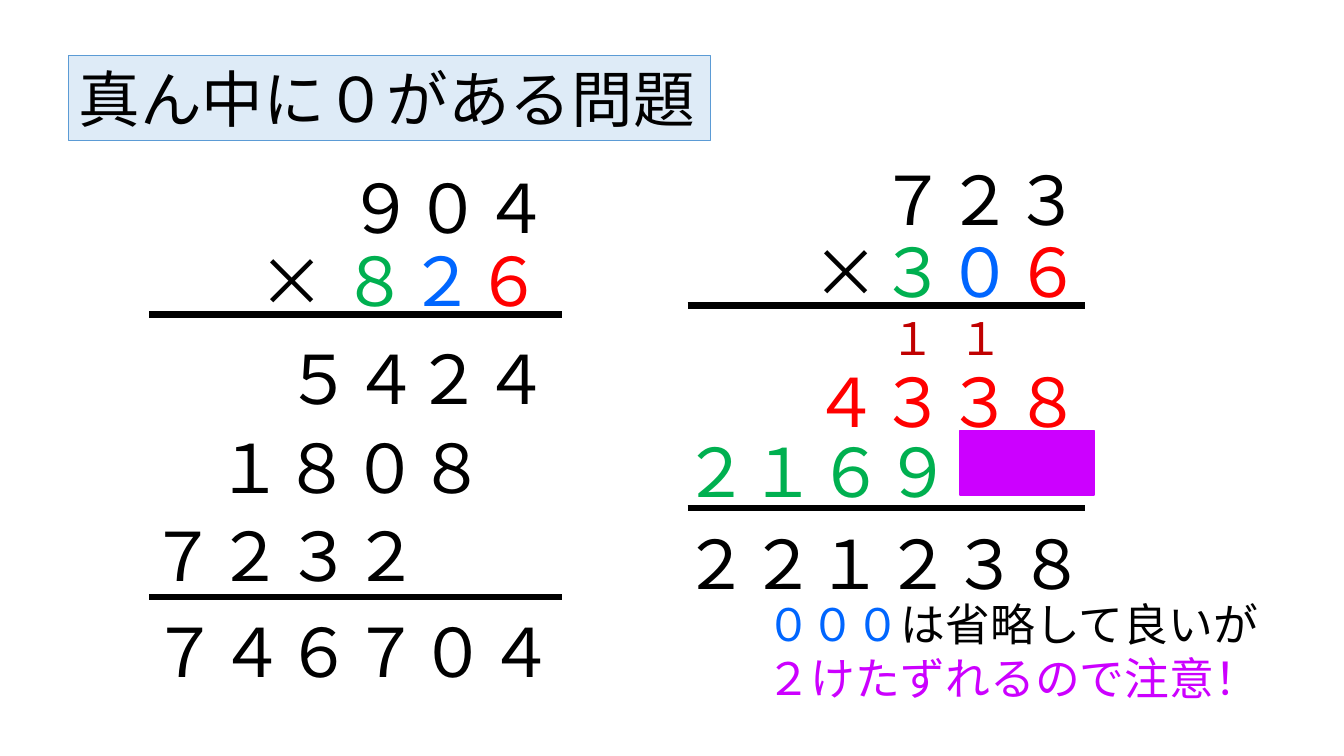
from lxml import etree
from pptx import Presentation
from pptx.dml.color import RGBColor
from pptx.enum.shapes import MSO_CONNECTOR, MSO_SHAPE
from pptx.enum.text import MSO_ANCHOR, MSO_AUTO_SIZE, PP_ALIGN
from pptx.oxml.ns import qn
from pptx.util import Inches, Pt

RECTANGLE = MSO_SHAPE.RECTANGLE
STRAIGHT = MSO_CONNECTOR.STRAIGHT
LEFT = PP_ALIGN.LEFT
TOP, MIDDLE = MSO_ANCHOR.TOP, MSO_ANCHOR.MIDDLE
FIT_SHAPE = MSO_AUTO_SIZE.SHAPE_TO_FIT_TEXT

FONT = "Noto Sans CJK JP"
BLACK, RED, DARK_RED = "000000", "FF0000", "C00000"
GREEN, BLUE, PURPLE = "00B050", "0066FF", "CC00FF"
TITLE_FILL, TITLE_LINE = "DEEBF7", "5B9BD5"
DIGIT_SIZE, CARRY_SIZE, NOTE_SIZE, TITLE_SIZE = 48, 32, 32, 44
DIGIT_HEIGHT, CARRY_HEIGHT = 0.91, 0.64

TITLE = "真ん中に０がある問題"
NOTE = [
    [("０００", BLUE), ("は省略して良いが", BLACK)],
    [("２けたずれるので注意！", PURPLE)],
]

# Each row: top, then its groups of digits as (left, width, runs)
LEFT_PROBLEM = [
    (1.6, [(3.35, 2.21, [("９０４", BLACK)])]),
    (2.32, [(2.47, 3.2, [("× ", BLACK), ("８", GREEN), ("２", BLUE), ("６", RED)])]),
    (3.3, [(2.73, 1.56, [("５４", BLACK)]), (4.02, 1.55, [("２４", BLACK)])]),
    (4.18, [(2.05, 1.57, [("１８", BLACK)]), (3.39, 1.6, [("０８", BLACK)])]),
    (5.05, [(1.38, 1.6, [("７２", BLACK)]), (2.73, 1.6, [("３２", BLACK)])]),
    (6.01, [(1.4, 4.23, [("７４６７０４", BLACK)])]),
]
RIGHT_PROBLEM = [
    (1.52, [(8.62, 2.21, [("７２３", BLACK)])]),
    (2.24, [(7.96, 2.97, [("×", BLACK), ("３", GREEN), ("０", BLUE), ("６", RED)])]),
    (3.53, [(7.96, 1.56, [("４３", RED)]), (9.29, 0.77, [("３", RED)]),
            (9.96, 0.8, [("８", RED)])]),
    (4.22, [(6.67, 1.56, [("２１", GREEN)]), (8.01, 0.8, [("６", GREEN)]),
            (8.67, 0.8, [("９", GREEN)])]),
    (5.13, [(6.67, 4.29, [("２２１２３８", BLACK)])]),
]
CARRY_TOP, CARRY_WIDTH, CARRY_LEFTS = 3.03, 0.64, (8.73, 9.41)
# Each problem's rules: start, end, heights
RULES = [(1.48, 5.57, (3.12, 5.92)), (6.82, 10.76, (3.03, 5.04))]


def color(hex_string):
    return RGBColor.from_string(hex_string)


def write(shape, paragraphs, size, wrap=True, anchor=TOP):
    """Fill a shape with paragraphs, each a list of (text, colour) runs."""
    frame = shape.text_frame
    frame.word_wrap = wrap
    frame.auto_size = FIT_SHAPE
    frame.vertical_anchor = anchor
    for index, runs in enumerate(paragraphs):
        paragraph = frame.add_paragraph() if index else frame.paragraphs[0]
        paragraph.alignment = LEFT
        for text, run_color in runs:
            run = paragraph.add_run()
            run.text = text
            run.font.size = Pt(size)
            run.font.name = FONT
            run.font.color.rgb = color(run_color)
            east_asian = etree.SubElement(run.font._element, qn("a:ea"))
            east_asian.set("typeface", FONT)


def add_text(slide, left, top, width, height, paragraphs, size, wrap=True):
    box = slide.shapes.add_textbox(
        Inches(left), Inches(top), Inches(width), Inches(height))
    write(box, paragraphs, size, wrap)


def paint(shape, fill, line, line_width):
    shape.fill.solid()
    shape.fill.fore_color.rgb = color(fill)
    shape.line.color.rgb = color(line)
    shape.line.width = Pt(line_width)


def add_rule(slide, start, end, height):
    rule = slide.shapes.add_connector(
        STRAIGHT, Inches(start), Inches(height), Inches(end), Inches(height))
    rule.line.color.rgb = color(BLACK)
    rule.line.width = Pt(4.5)
    etree.SubElement(rule._element.spPr, qn("a:effectLst"))


def add_title(slide):
    title = slide.shapes.title
    title.left, title.top = Inches(0.68), Inches(0.55)
    title.width, title.height = Inches(6.37), Inches(0.84)
    paint(title, TITLE_FILL, TITLE_LINE, 0.75)
    write(title, [[(TITLE, BLACK)]], TITLE_SIZE, wrap=False, anchor=MIDDLE)


def main():
    presentation = Presentation()
    presentation.slide_width = Inches(13.33)
    presentation.slide_height = Inches(7.5)
    slide = presentation.slides.add_slide(presentation.slide_layouts[5])

    add_title(slide)
    for top, groups in LEFT_PROBLEM + RIGHT_PROBLEM:
        for left, width, runs in groups:
            add_text(slide, left, top, width, DIGIT_HEIGHT, [runs], DIGIT_SIZE)
    for left in CARRY_LEFTS:
        add_text(slide, left, CARRY_TOP, CARRY_WIDTH, CARRY_HEIGHT,
                 [[("１", DARK_RED)]], CARRY_SIZE)
    for start, end, heights in RULES:
        for height in heights:
            add_rule(slide, start, end, height)
    add_text(slide, 7.5, 5.87, 5.14, 1.18, NOTE, NOTE_SIZE, wrap=False)

    omitted_zeros = slide.shapes.add_shape(
        RECTANGLE, Inches(9.52), Inches(4.27), Inches(1.33), Inches(0.64))
    omitted_zeros.shadow.inherit = False
    paint(omitted_zeros, PURPLE, PURPLE, 1)

    presentation.save("out.pptx")


if __name__ == "__main__":
    main()
